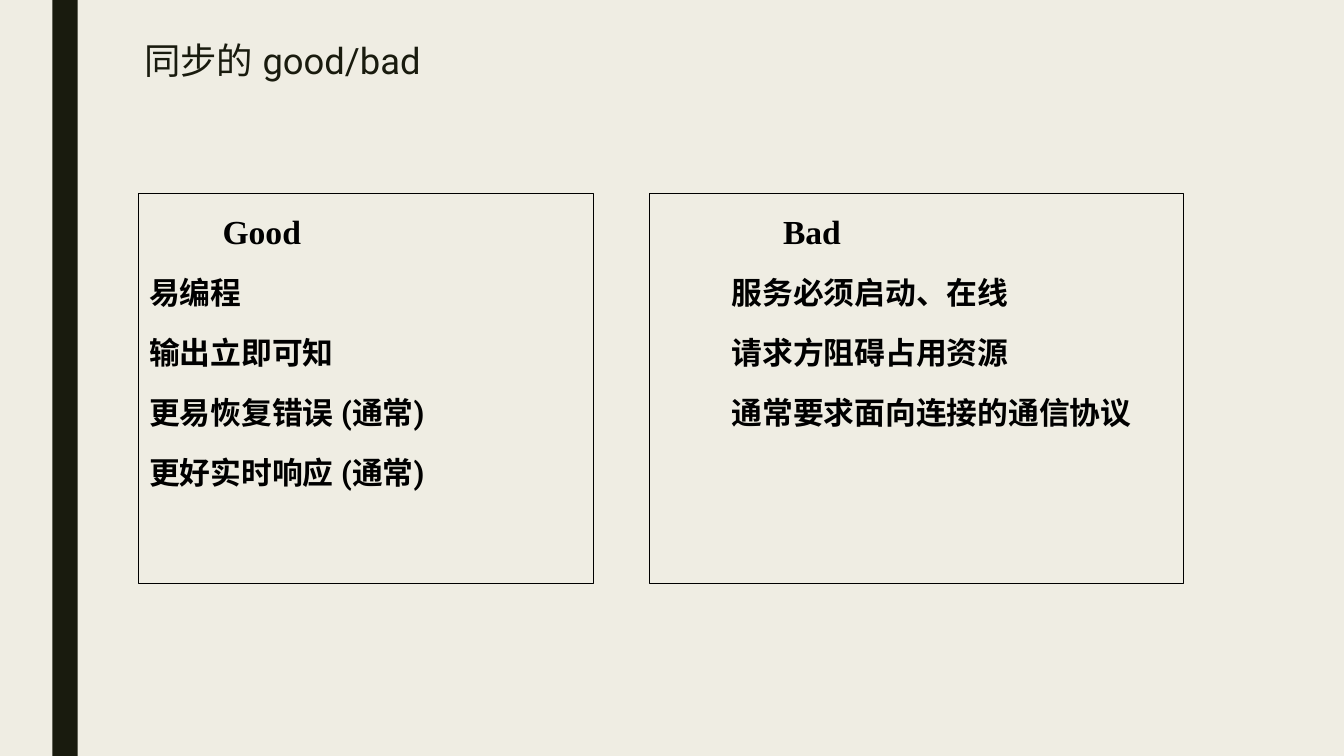
from dataclasses import dataclass

from lxml import etree
from pptx import Presentation
from pptx.dml.color import RGBColor
from pptx.enum.shapes import MSO_SHAPE
from pptx.enum.text import MSO_ANCHOR, MSO_AUTO_SIZE, PP_ALIGN
from pptx.oxml.ns import qn
from pptx.slide import Slide
from pptx.text.text import TextFrame
from pptx.util import Pt

RECT = MSO_SHAPE.RECTANGLE
TOP = MSO_ANCHOR.TOP
LEFT = PP_ALIGN.LEFT
NO_FIT = MSO_AUTO_SIZE.NONE

INK, BLACK, PAPER = "191B0E", "000000", "EFEDE3"
SANS, SERIF = "Roboto", "Times New Roman"
INSET, INDENT = 7.2, 27.36


@dataclass
class Panel:
    head: str
    lines: list[str]
    left: float
    width: float
    head_left: float
    head_width: float
    list_left: float


PANELS = [
    Panel("Good", ["易编程", "输出立即可知", "更易恢复错误 (通常)", "更好实时响应 (通常)"],
          98.64, 325.44, 151.92, 120.24, 72),
    Panel("Bad", ["服务必须启动、在线", "请求方阻碍占用资源", "通常要求面向连接的通信协议"],
          463.68, 381.6, 552.24, 136.08, 488.16),
]


def color(code: str) -> RGBColor:
    return RGBColor.from_string(code)


def style(frame: TextFrame, size: float, font: str, code: str,
          bold: bool = False, spacing: float = 1, gap: float = 0) -> None:
    frame.word_wrap = True
    frame.auto_size = NO_FIT
    frame.vertical_anchor = TOP
    for para in frame.paragraphs:
        para.alignment = LEFT
        para.line_spacing = spacing
        para.space_before = para.space_after = Pt(gap)
        for run in para.runs:
            run.font.size = Pt(size)
            run.font.name = font
            run.font.bold = bold
            run.font.color.rgb = color(code)
            # East Asian glyphs take their face from a:ea
            face = etree.SubElement(run.font._element, qn("a:ea"))
            face.set("typeface", font)


def add_text(slide: Slide, text: str, left: float, top: float,
             width: float, height: float) -> TextFrame:
    box = slide.shapes.add_textbox(Pt(left), Pt(top), Pt(width), Pt(height))
    box.text_frame.text = text
    return box.text_frame


def add_bar(slide: Slide) -> None:
    bar = slide.shapes.add_shape(RECT, Pt(37.44), 0, Pt(18), Pt(540))
    bar.shadow.inherit = False
    bar.fill.solid()
    bar.fill.fore_color.rgb = color(INK)
    bar.line.fill.background()


def set_title(slide: Slide, text: str) -> None:
    title = slide.shapes.title
    title.left, title.top = Pt(95.76), Pt(27.36)
    title.width, title.height = Pt(864), Pt(62.64)
    title.text_frame.text = text
    style(title.text_frame, 26, SANS, INK, spacing=0.89)


def add_panel(slide: Slide, panel: Panel) -> None:
    frame = slide.shapes.add_shape(
        RECT, Pt(panel.left), Pt(138.24), Pt(panel.width), Pt(278.64))
    frame.shadow.inherit = False
    frame.fill.background()
    frame.line.color.rgb = color(BLACK)
    frame.line.width = Pt(0.75)

    head = add_text(slide, panel.head, panel.head_left, 146.88,
                    panel.head_width, 36)
    style(head, 24, SERIF, BLACK, bold=True)

    body = add_text(slide, "\n".join(panel.lines), panel.list_left, 182.88,
                    400.32, 324)
    body.margin_left = Pt(INSET + INDENT)
    style(body, 22, SANS, BLACK, bold=True, spacing=1.35, gap=3.6)


def main() -> None:
    deck = Presentation()
    deck.slide_width, deck.slide_height = Pt(960), Pt(540)
    slide = deck.slides.add_slide(deck.slide_layouts[5])
    slide.background.fill.solid()
    slide.background.fill.fore_color.rgb = color(PAPER)
    add_bar(slide)
    set_title(slide, "同步的 good/bad")
    for panel in PANELS:
        add_panel(slide, panel)
    deck.save("out.pptx")


if __name__ == "__main__":
    main()
